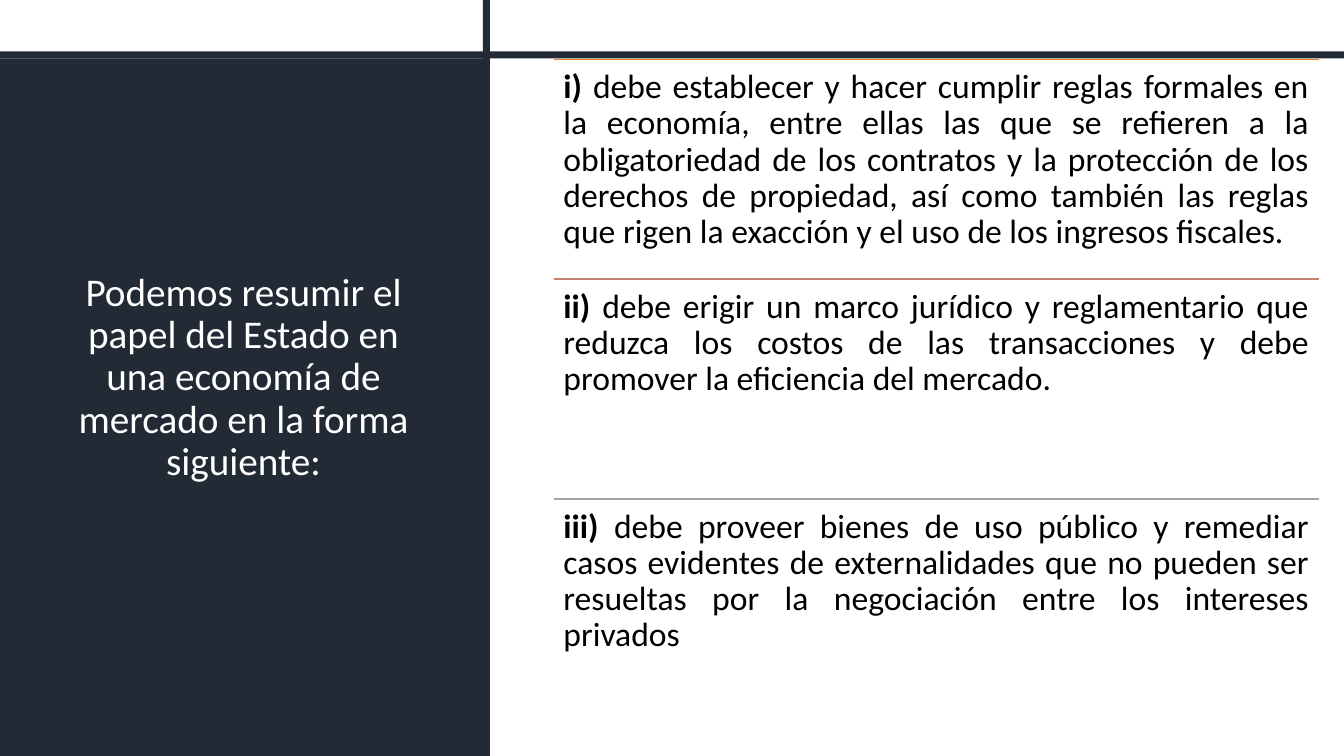
from dataclasses import dataclass

from lxml import etree
from pptx import Presentation
from pptx.dml.color import RGBColor
from pptx.enum import shapes, text
from pptx.oxml import ns
from pptx.util import Inches, Pt


@dataclass(frozen=True)
class Theme:
    font: str = "Calibri"
    dark: str = "222A35"
    light: str = "FFFFFF"
    ink: str = "000000"
    rules: tuple = ("ED7D31", "C48170", "A5A5A5")
    title_size: float = 28
    body_size: float = 24
    rule_width: float = 1


THEME = Theme()
TITLE = "Podemos resumir el papel del Estado en una economía de mercado en la forma siguiente:"
ROLES = (
    ("i)", " debe establecer y hacer cumplir reglas formales en la economía, entre ellas las que "
     "se refieren a la obligatoriedad de los contratos y la protección de los derechos de "
     "propiedad, así como también las reglas que rigen la exacción y el uso de los ingresos "
     "fiscales."),
    ("ii)", " debe erigir un marco jurídico y reglamentario que reduzca los costos de las "
     "transacciones y debe promover la eficiencia del mercado."),
    ("iii)", " debe proveer bienes de uso público y remediar casos evidentes de externalidades "
     "que no pueden ser resueltas por la negociación entre los intereses privados"),
)
ROLE_LEFT, ROLE_TOP, ROLE_WIDTH, ROLE_HEIGHT = 5.49, 0.59, 7.59, 2.18


def apply_format(target, values):
    for name, value in values.items():
        setattr(target, name, value)


def add_run(paragraph, content, size, color, bold=False):
    run = paragraph.add_run()
    run.text = content
    apply_format(run.font, {"name": THEME.font, "size": Pt(size), "bold": bold})
    run.font.color.rgb = RGBColor.from_string(color)


def add_block(slide, left, top, width, height):
    shape = slide.shapes.add_shape(
        shapes.MSO_SHAPE.RECTANGLE, *map(Inches, (left, top, width, height)))
    shape.shadow.inherit = False
    shape.fill.solid()
    shape.fill.fore_color.rgb = RGBColor.from_string(THEME.dark)
    shape.line.fill.background()
    return shape


def fill_title(title):
    apply_format(title, {"left": Inches(0.66), "top": Inches(0.84),
                         "width": Inches(3.51), "height": Inches(5.82)})
    frame = title.text_frame
    apply_format(frame, {"word_wrap": True, "auto_size": text.MSO_AUTO_SIZE.NONE,
                         "vertical_anchor": text.MSO_ANCHOR.MIDDLE})
    paragraph = frame.paragraphs[0]
    apply_format(paragraph, {"alignment": text.PP_ALIGN.CENTER, "line_spacing": 0.9})
    add_run(paragraph, TITLE, THEME.title_size, THEME.light)


def add_rule(slide, top, color):
    rule = slide.shapes.add_connector(
        shapes.MSO_CONNECTOR.STRAIGHT,
        *map(Inches, (ROLE_LEFT, top, ROLE_LEFT + ROLE_WIDTH, top)))
    rule.line.color.rgb = RGBColor.from_string(color)
    rule.line.width = Pt(THEME.rule_width)
    etree.SubElement(rule.element.spPr, ns.qn("a:effectLst"))


def add_role(slide, top, numeral, description):
    box = slide.shapes.add_textbox(
        *map(Inches, (ROLE_LEFT, top, ROLE_WIDTH, ROLE_HEIGHT)))
    frame = box.text_frame
    apply_format(frame, {"word_wrap": True, "vertical_anchor": text.MSO_ANCHOR.TOP})
    apply_format(frame, {f"margin_{side}": Inches(0.1)
                         for side in ("left", "top", "right", "bottom")})
    paragraph = frame.paragraphs[0]
    apply_format(paragraph, {"alignment": text.PP_ALIGN.JUSTIFY, "line_spacing": 0.9,
                             "space_after": Pt(0.35 * THEME.body_size)})
    add_run(paragraph, numeral, THEME.body_size, THEME.ink, bold=True)
    add_run(paragraph, description, THEME.body_size, THEME.ink)


def main():
    presentation = Presentation()
    apply_format(presentation, {"slide_width": Inches(13.33), "slide_height": Inches(7.5)})
    slide = presentation.slides.add_slide(presentation.slide_layouts[5])
    title = slide.shapes.title
    panel = add_block(slide, 0, 0.58, 4.86, 6.92)
    panel.element.addnext(title.element)
    fill_title(title)
    add_block(slide, 4.79, 0, 0.07, 7.5)
    add_block(slide, 0, 0.51, 13.33, 0.07)
    for index, ((numeral, description), color) in enumerate(zip(ROLES, THEME.rules)):
        top = ROLE_TOP + index * ROLE_HEIGHT
        add_rule(slide, top, color)
        add_role(slide, top, numeral, description)
    presentation.save("out.pptx")


if __name__ == "__main__":
    main()
